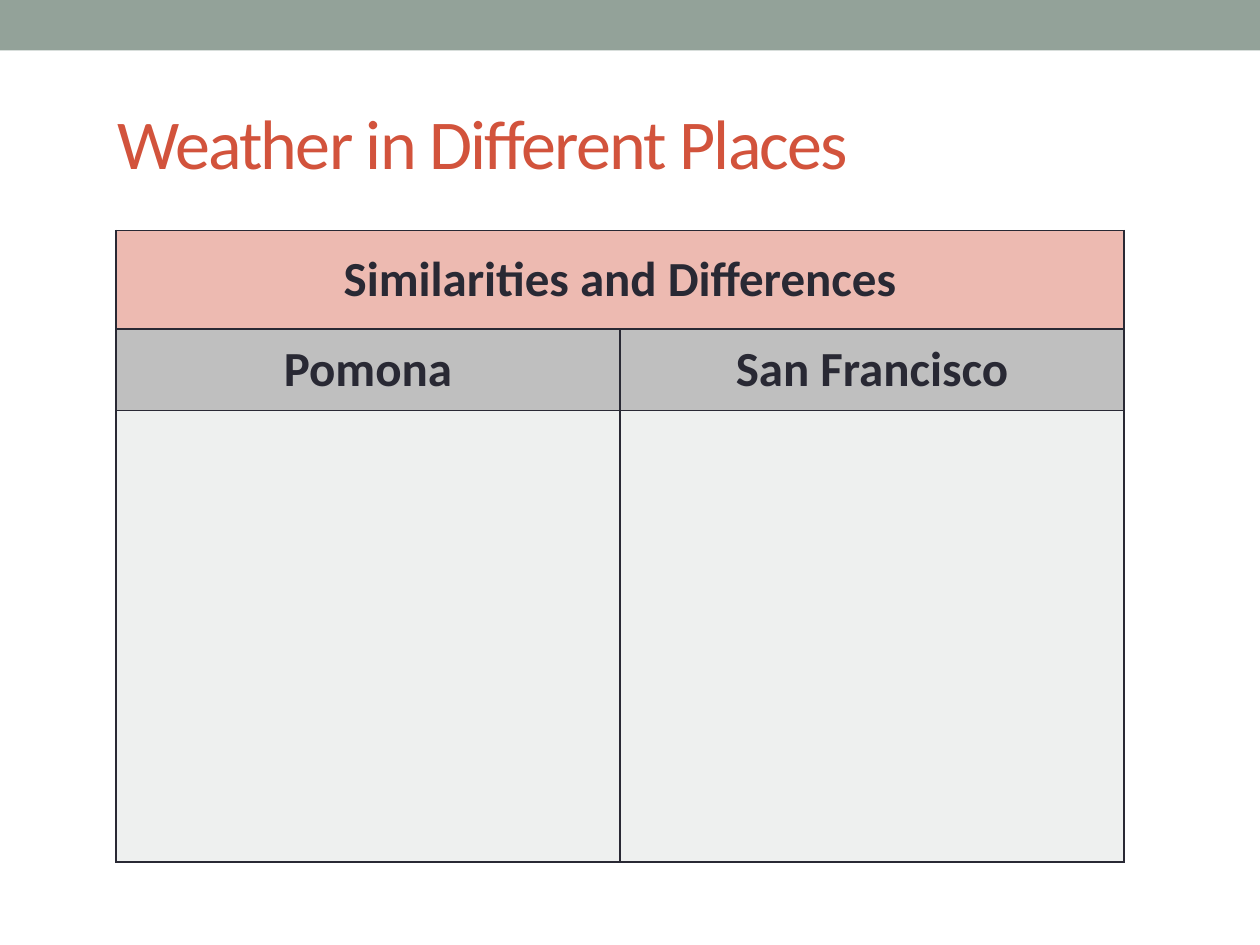
from lxml import etree
from pptx import Presentation
from pptx.dml.color import RGBColor
from pptx.enum import shapes, text
from pptx.oxml import ns
from pptx.util import Inches, Pt

SAGE = RGBColor(0x93, 0xA2, 0x99)
RED = RGBColor(0xD2, 0x53, 0x3C)
INK = RGBColor(0x29, 0x29, 0x34)
PINK = RGBColor(0xED, 0xBA, 0xB1)
GREY = RGBColor(0xBF, 0xBF, 0xBF)
PALE = RGBColor(0xEE, 0xF0, 0xEF)
FONT = "Calibri"


def write(para, words, size, color, bold=False):
    """Add one styled run to a paragraph and return it."""
    run = para.add_run()
    run.text = words
    font = run.font
    font.name, font.size, font.bold = FONT, Pt(size), bold
    font.color.rgb = color
    return run


def add_band(slide, left, top, width, height):
    """Draw the plain band along the top edge."""
    band = slide.shapes.add_shape(
        shapes.MSO_SHAPE.RECTANGLE, left, top, width, height)
    band.shadow.inherit = False
    band.fill.solid()
    band.fill.fore_color.rgb = SAGE
    band.line.fill.background()


def set_title(slide, left, top, width, height):
    """Place and fill the title placeholder."""
    title = slide.shapes.title
    title.left, title.top, title.width, title.height = left, top, width, height
    frame = title.text_frame
    frame.word_wrap = True
    frame.vertical_anchor = text.MSO_ANCHOR.MIDDLE
    para = frame.paragraphs[0]
    para.alignment = text.PP_ALIGN.LEFT
    run = write(para, "Weather in Different Places", 40, RED)
    run.font._element.set("spc", "-100")


def style_cell(cell, fill):
    """Give a cell its borders and fill."""
    props = cell._tc.get_or_add_tcPr()
    for side in ("a:lnL", "a:lnR", "a:lnT", "a:lnB"):
        line = etree.SubElement(props, ns.qn(side), w=str(Pt(1)))
        solid = etree.SubElement(line, ns.qn("a:solidFill"))
        etree.SubElement(solid, ns.qn("a:srgbClr"), val=str(INK))
    cell.fill.solid()
    cell.fill.fore_color.rgb = fill


def add_grid(slide, left, top, width, height):
    """Build the comparison table with two blank columns to fill in."""
    rows = [
        (0.78, PINK, ["Similarities and Differences", ""]),
        (0.65, GREY, ["Pomona", "San Francisco"]),
        (3.58, PALE, ["", ""]),
    ]
    table = slide.shapes.add_table(
        len(rows), 2, left, top, width, height).table
    for r, (tall, fill, words) in enumerate(rows):
        table.rows[r].height = Inches(tall)
        for c, word in enumerate(words):
            cell = table.cell(r, c)
            style_cell(cell, fill)
            cell.vertical_anchor = text.MSO_ANCHOR.MIDDLE
            if word:
                para = cell.text_frame.paragraphs[0]
                para.alignment = text.PP_ALIGN.CENTER
                write(para, word, 28, INK, True)
    table.cell(0, 0).merge(table.cell(0, 1))


def main():
    """Build and save the slide."""
    deck = Presentation()
    deck.slide_width, deck.slide_height = Inches(10), Inches(7.5)
    slide = deck.slides.add_slide(deck.slide_layouts[5])
    add_band(slide, 0, 0, deck.slide_width, Inches(0.4))
    set_title(slide, Inches(0.83), Inches(0.58), Inches(8.67), Inches(1.08))
    add_grid(slide, Inches(0.92), Inches(1.83), Inches(8), Inches(5.01))
    deck.save("out.pptx")


if __name__ == "__main__":
    main()
